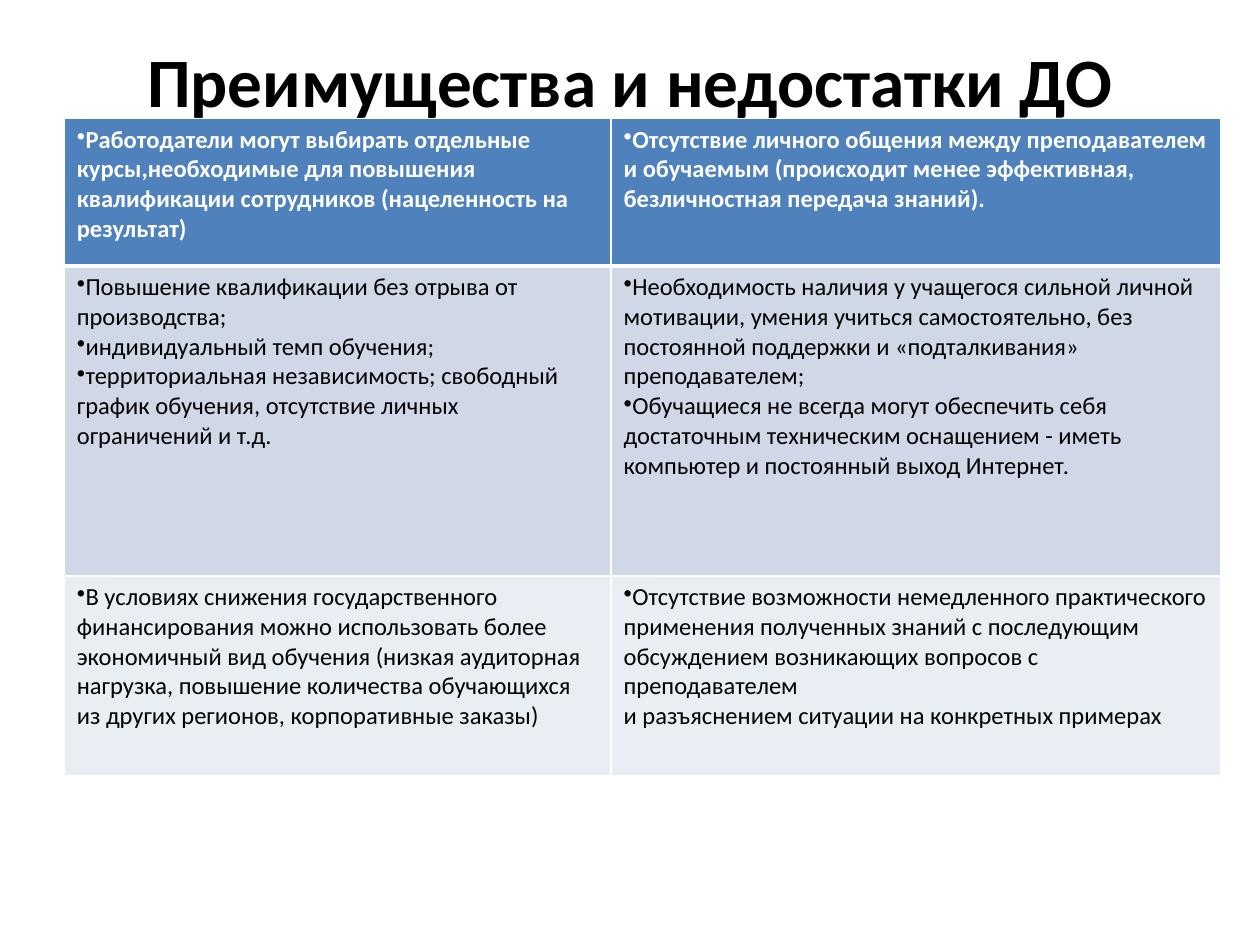
from copy import deepcopy

from lxml.etree import SubElement
from pptx import Presentation
from pptx.dml.color import RGBColor
from pptx.enum.text import MSO_ANCHOR, PP_ALIGN
from pptx.oxml.ns import qn
from pptx.util import Inches, Pt

WHITE = RGBColor(0xFF, 0xFF, 0xFF)
BLACK = RGBColor(0, 0, 0)
HEADER_BLUE = RGBColor(0x4F, 0x81, 0xBD)
BAND_DARK = RGBColor(0xD0, 0xD8, 0xE8)
BAND_LIGHT = RGBColor(0xE9, 0xED, 0xF4)

COLUMN_WIDTHS = [4.34, 4.84]
ROW_HEIGHTS = [1.17, 2.46, 1.59]
ROW_FILLS = [HEADER_BLUE, BAND_DARK, BAND_LIGHT]

# Each row holds the advantages and the drawbacks, one string per bullet
ROWS = [
    (["Работодатели могут выбирать отдельные курсы,необходимые для повышения "
      "квалификации сотрудников (нацеленность на результат)"],
     ["Отсутствие личного общения между преподавателем и обучаемым "
      "(происходит менее эффективная,\nбезличностная передача знаний)."]),
    (["Повышение квалификации без отрыва от производства;",
      "индивидуальный темп обучения;",
      "территориальная независимость; свободный график обучения, "
      "отсутствие личных ограничений и т.д."],
     ["Необходимость наличия у учащегося сильной личной мотивации, умения "
      "учиться самостоятельно, без постоянной поддержки и «подталкивания» "
      "преподавателем;",
      "Обучащиеся не всегда могут обеспечить себя достаточным техническим "
      "оснащением - иметь компьютер и постоянный выход Интернет."]),
    (["В условиях снижения государственного финансирования можно использовать "
      "более экономичный вид обучения (низкая аудиторная нагрузка, повышение "
      "количества обучающихся из других регионов, корпоративные заказы)"],
     ["Отсутствие возможности немедленного практического применения полученных "
      "знаний с последующим обсуждением возникающих вопросов с преподавателем\n"
      "и разъяснением ситуации на конкретных примерах"]),
]


def write_text(para, text, size=14, color=BLACK, bold=False,
               align=PP_ALIGN.LEFT, bullet=None):
    para.text = text
    para.alignment = align
    for span in para.runs:
        span.font.name = "Calibri"
        span.font.size = Pt(size)
        span.font.bold = bold
        span.font.color.rgb = color
    # Line breaks take the format of the text around them
    for line_break in para._p.findall(qn("a:br")):
        line_break.insert(0, deepcopy(para.runs[0].font._element))
    if bullet:
        properties = para._p.get_or_add_pPr()
        properties.set("marL", "0")
        properties.set("indent", "0")
        SubElement(properties, qn("a:buChar"), char=bullet)


def set_borders(cell, color, bottom=1, top=1):
    properties = cell._tc.get_or_add_tcPr()
    widths = {"a:lnL": 1, "a:lnR": 1, "a:lnT": top, "a:lnB": bottom}
    for index, (tag, width) in enumerate(widths.items()):
        line = SubElement(properties, qn(tag), w=str(Pt(width)))
        fill = SubElement(line, qn("a:solidFill"))
        SubElement(fill, qn("a:srgbClr"), val=str(color))
        properties.insert(index, line)


def add_title(page, left, top, width, height, text):
    box = page.shapes.add_textbox(Inches(left), Inches(top),
                                  Inches(width), Inches(height))
    frame = box.text_frame
    frame.word_wrap = True
    frame.vertical_anchor = MSO_ANCHOR.TOP
    frame.margin_top = 0
    write_text(frame.paragraphs[0], text, size=39.6, bold=True,
               align=PP_ALIGN.CENTER)


def add_comparison(page, left, top):
    table = page.shapes.add_table(
        len(ROWS), len(COLUMN_WIDTHS), Inches(left), Inches(top),
        Inches(sum(COLUMN_WIDTHS)), Inches(sum(ROW_HEIGHTS))).table
    for column, width in zip(table.columns, COLUMN_WIDTHS):
        column.width = Inches(width)
    for row_index, (row, height) in enumerate(zip(table.rows, ROW_HEIGHTS)):
        row.height = Inches(height)
        is_header = row_index == 0
        for cell, items in zip(row.cells, ROWS[row_index]):
            cell.fill.solid()
            cell.fill.fore_color.rgb = ROW_FILLS[row_index]
            set_borders(cell, WHITE, bottom=3 if is_header else 1,
                        top=3 if row_index == 1 else 1)
            frame = cell.text_frame
            for item_index, item in enumerate(items):
                para = frame.add_paragraph() if item_index else frame.paragraphs[0]
                write_text(para, item, color=WHITE if is_header else BLACK,
                           bold=is_header, bullet="•")


def main():
    deck = Presentation()
    deck.slide_width, deck.slide_height = Inches(10), Inches(7.5)
    page = deck.slides.add_slide(deck.slide_layouts[6])
    add_title(page, 0.5, 0.3, 9, 1.25, "Преимущества и недостатки ДО")
    add_comparison(page, 0.51, 0.94)
    deck.save("out.pptx")


if __name__ == "__main__":
    main()
